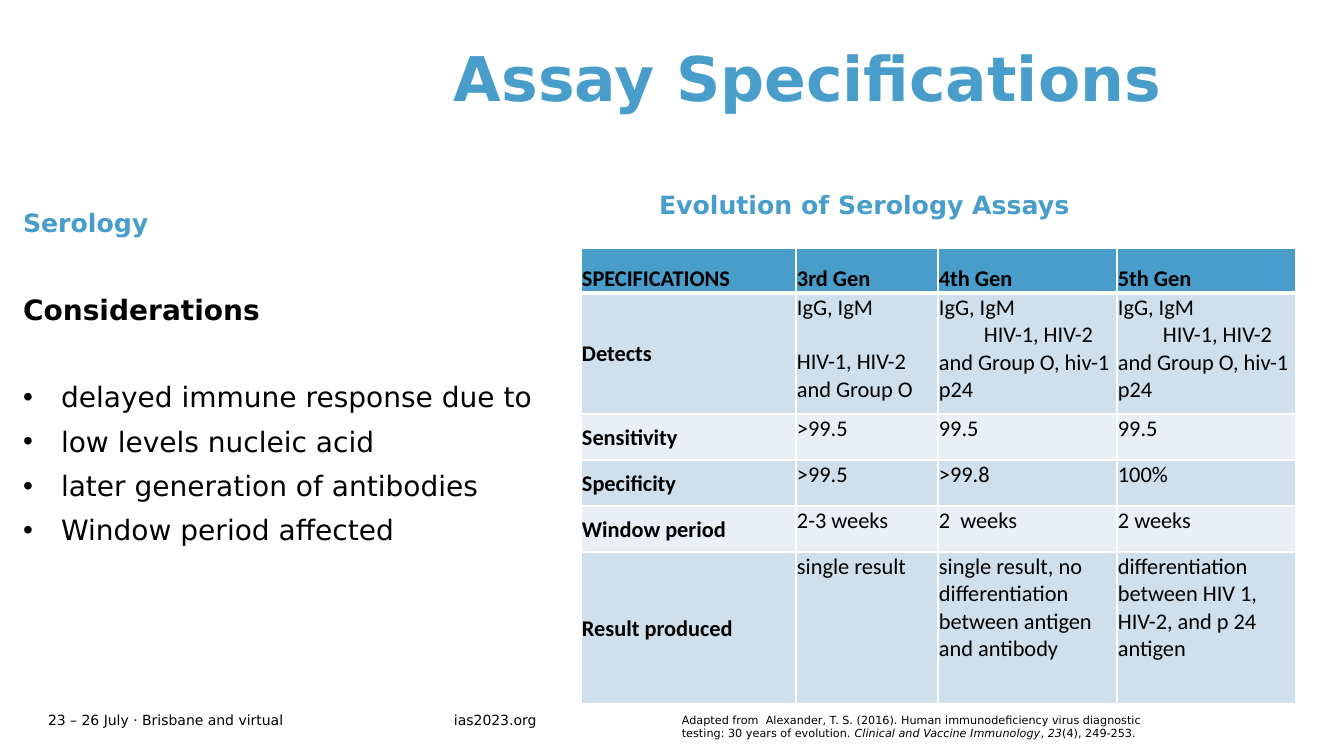
from pptx import Presentation, util as u
from pptx.dml.color import RGBColor
from pptx.enum import text
from pptx.oxml import parse_xml
from pptx.oxml.ns import nsdecls

HEADING = "Assay Specifications"
CONSIDERATIONS = [
    "delayed immune response due to",
    "low levels nucleic acid",
    "later generation of antibodies",
    "Window period affected",
]
GENERATIONS = ["SPECIFICATIONS", "3rd Gen", "4th Gen", "5th Gen"]
ANTIGENS = "HIV-1, HIV-2 and Group O"
SPECIFICATIONS = [
    ["Detects", f"IgG, IgM\n{ANTIGENS}", f"IgG, IgM\n{ANTIGENS}, hiv-1 p24", f"IgG, IgM\n{ANTIGENS}, hiv-1 p24"],
    ["Sensitivity", ">99.5", "99.5", "99.5"],
    ["Specificity", ">99.5", ">99.8", "100%"],
    ["Window period", "2-3 weeks", "2  weeks", "2 weeks"],
    [
        "Result produced",
        "single result",
        "single result, no differentiation between antigen and antibody",
        "differentiation between HIV 1, HIV-2, and p 24 antigen",
    ],
]
CITATION = [
    ("Adapted from  Alexander, T. S. (2016). Human immunodeficiency virus diagnostic testing: "
     "30 years of evolution. ", False),
    ("Clinical and Vaccine Immunology", True),
    (",", False),
    (" 23", True),
    ("(4), 249-253.", False),
]
COLUMN_WIDTHS = [215, 142, 179, 179]
ROW_HEIGHTS = [45, 121, 46, 46, 46, 152]
SECOND_LINE = {1: {"space_before": u.Pt(19.5)}, 2: {"indent": 45}, 3: {"indent": 45}}

THEME = {
    "accent": "489DCB", "ink": "000000", "rule": "FFFFFF", "bands": ["CFDFEC", "E9EFF6"],
    "sans": "DejaVu Sans", "grid": "Calibri",
    "title": 44, "body": 20, "label": 18, "cell": 16, "footer": 10, "citation": 8,
}
ANCHOR = text.MSO_ANCHOR
FLUSH = dict.fromkeys(["margin_left", "margin_top", "margin_right", "margin_bottom"], 0)


def px(length):
    return u.Emu(round(length * 914400 / 100.8))


def apply(target, formats):
    for name, value in formats.items():
        setattr(target, name, value)


def style(font, size, colour="ink", face="sans", bold=False, italic=False):
    apply(font, {"size": u.Pt(THEME[size]), "name": THEME[face], "bold": bold, "italic": italic})
    font.color.rgb = RGBColor.from_string(THEME[colour])


def write(paragraph, words, spacing=None, **look):
    if spacing:
        apply(paragraph, spacing)
    run = paragraph.add_run()
    run.text = words
    style(run.font, **look)


def text_area(left, top, width, height, anchor=ANCHOR.TOP, margins=FLUSH):
    frame = slide.shapes.add_textbox(px(left), px(top), px(width), px(height)).text_frame
    apply(frame, {"word_wrap": True, "vertical_anchor": anchor, **margins})
    return frame


def add_bullet(paragraph, hanging):
    properties = paragraph._p.get_or_add_pPr()
    properties.set("marL", str(px(hanging)))
    properties.set("indent", str(-px(hanging)))
    properties.append(parse_xml(f'<a:buFont {nsdecls("a")} typeface="Arial"/>'))
    properties.append(parse_xml(f'<a:buChar {nsdecls("a")} char="•"/>'))


def add_borders(cell, top, bottom):
    properties = cell._tc.get_or_add_tcPr()
    for side, points in {"L": 1, "R": 1, "T": top, "B": bottom}.items():
        properties.append(parse_xml(
            f'<a:ln{side} {nsdecls("a")} w="{u.Pt(points)}"><a:solidFill>'
            f'<a:srgbClr val="{THEME["rule"]}"/></a:solidFill></a:ln{side}>'))


def fill_cell(cell, words, row, column):
    header, label = row == 0, column == 0
    add_borders(cell, top=3 if row == 1 else 1, bottom=3 if header else 1)
    cell.fill.solid()
    cell.fill.fore_color.rgb = RGBColor.from_string(
        THEME["accent"] if header else THEME["bands"][(row - 1) % 2])
    anchor = ANCHOR.BOTTOM if header else ANCHOR.MIDDLE if label else ANCHOR.TOP
    apply(cell, {"vertical_anchor": anchor, **dict.fromkeys(FLUSH, px(1)), "margin_bottom": 0})
    for index, line in enumerate(words.split("\n")):
        paragraph = cell.text_frame.add_paragraph() if index else cell.text_frame.paragraphs[0]
        spacing = dict(SECOND_LINE[column]) if index else {}
        if "indent" in spacing:
            paragraph._p.get_or_add_pPr().set("indent", str(px(spacing.pop("indent"))))
        write(paragraph, line, spacing, size="cell", face="grid", bold=header or label)


deck = Presentation()
apply(deck, {"slide_width": px(1344), "slide_height": px(756)})
slide = deck.slides.add_slide(deck.slide_layouts[5])
tight = {"line_spacing": 0.9}

title = slide.shapes.title
apply(title, {"left": px(454), "top": px(48), "width": px(842), "height": px(135)})
apply(title.text_frame, {"vertical_anchor": ANCHOR.TOP, "word_wrap": True,
                         "auto_size": text.MSO_AUTO_SIZE.NONE, **FLUSH})
write(title.text_frame.paragraphs[0], HEADING, {"alignment": text.PP_ALIGN.LEFT, **tight},
      size="title", colour="accent", bold=True)

for label, left, top in [("Serology", 23, 166), ("Evolution of Serology Assays", 659, 148)]:
    write(text_area(left, top, 600, 72, ANCHOR.BOTTOM).paragraphs[0], label, tight,
          size="label", colour="accent", bold=True)

considerations = text_area(23, 296, 600, 353)
write(considerations.paragraphs[0], "Considerations", tight, size="body", bold=True)
for index, consideration in enumerate(CONSIDERATIONS):
    paragraph = considerations.add_paragraph()
    add_bullet(paragraph, 38)
    write(paragraph, consideration, {"space_before": u.Pt(10 if index else 41), **tight}, size="body")

assays = slide.shapes.add_table(
    len(ROW_HEIGHTS), len(COLUMN_WIDTHS), px(581), px(248),
    px(sum(COLUMN_WIDTHS)), px(sum(ROW_HEIGHTS))).table
for column, width in zip(assays.columns, COLUMN_WIDTHS):
    column.width = px(width)
for row, height in zip(assays.rows, ROW_HEIGHTS):
    row.height = px(height)
for row, entries in enumerate([GENERATIONS, *SPECIFICATIONS]):
    for column, words in enumerate(entries):
        fill_cell(assays.cell(row, column), words, row, column)

for words, left, width in [("23 – 26 July · Brisbane and virtual", 48, 405), ("ias2023.org", 454, 195)]:
    write(text_area(left, 708, width, 24, ANCHOR.MIDDLE).paragraphs[0], words, size="footer")

citation = text_area(672, 708, 519, 37, margins={})
for words, italic in CITATION:
    write(citation.paragraphs[0], words, size="citation", italic=italic)

deck.save("out.pptx")
